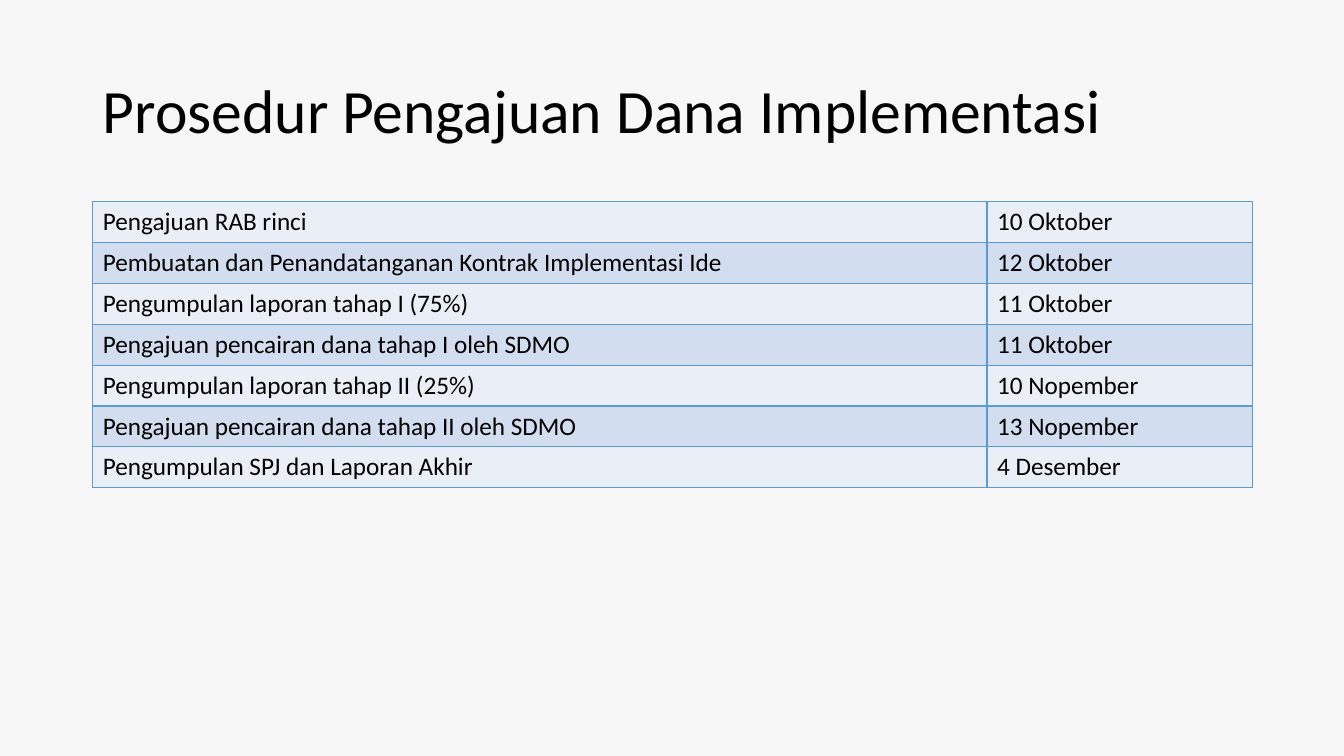
import dataclasses

import lxml.etree
import pptx
import pptx.dml.color
import pptx.enum.text
import pptx.oxml.ns
import pptx.slide
import pptx.table
import pptx.text.text
import pptx.util
from pptx.util import Inches

FONT = "Calibri"
BACKGROUND = pptx.dml.color.RGBColor(0xF7, 0xF7, 0xF7)
BLACK = pptx.dml.color.RGBColor(0x00, 0x00, 0x00)
BORDER = pptx.dml.color.RGBColor(0x5B, 0x9B, 0xD5)
BANDS = (
    pptx.dml.color.RGBColor(0xEA, 0xEF, 0xF7),
    pptx.dml.color.RGBColor(0xD2, 0xDE, 0xEF),
)

LEFT, WIDTH = Inches(0.92), Inches(11.5)
TABLE_TOP, TABLE_HEIGHT = Inches(2), Inches(2.84)
COLUMN_WIDTHS = (Inches(8.87), Inches(2.63))


@dataclasses.dataclass(frozen=True)
class Step:
    activity: str
    date: str


STEPS = (
    Step("Pengajuan RAB rinci", "10 Oktober"),
    Step("Pembuatan dan Penandatanganan Kontrak Implementasi Ide", "12 Oktober"),
    Step("Pengumpulan laporan tahap I (75%)", "11 Oktober"),
    Step("Pengajuan pencairan dana tahap I oleh SDMO", "11 Oktober"),
    Step("Pengumpulan laporan tahap II (25%)", "10 Nopember"),
    Step("Pengajuan pencairan dana tahap II oleh SDMO", "13 Nopember"),
    Step("Pengumpulan SPJ dan Laporan Akhir", "4 Desember"),
)


def write(frame: pptx.text.text.TextFrame, text: str, size: int) -> None:
    frame.text = text
    font = frame.paragraphs[0].runs[0].font
    font.name = FONT
    font.size = pptx.util.Pt(size)
    font.color.rgb = BLACK


def add_borders(cell: pptx.table._Cell) -> None:
    properties = cell._tc.get_or_add_tcPr()
    qn = pptx.oxml.ns.qn
    for side in ("lnL", "lnR", "lnT", "lnB"):
        line = lxml.etree.SubElement(properties, qn(f"a:{side}"), w=str(pptx.util.Pt(1)))
        fill = lxml.etree.SubElement(line, qn("a:solidFill"))
        lxml.etree.SubElement(fill, qn("a:srgbClr"), val=str(BORDER))


def format_title(page: pptx.slide.Slide) -> None:
    title = page.shapes.title
    title.left, title.top = LEFT, Inches(0.4)
    title.width, title.height = WIDTH, Inches(1.45)
    frame = title.text_frame
    write(frame, "Prosedur Pengajuan Dana Implementasi", 44)
    frame.word_wrap = True
    frame.vertical_anchor = pptx.enum.text.MSO_ANCHOR.MIDDLE
    para = frame.paragraphs[0]
    para.alignment = pptx.enum.text.PP_ALIGN.LEFT
    para.line_spacing = 0.9


def add_schedule(page: pptx.slide.Slide) -> None:
    table = page.shapes.add_table(
        len(STEPS), len(COLUMN_WIDTHS), LEFT, TABLE_TOP, WIDTH, TABLE_HEIGHT
    ).table
    table.first_row = False
    for column, width in zip(table.columns, COLUMN_WIDTHS):
        column.width = width
    for index, (row, step) in enumerate(zip(table.rows, STEPS)):
        for cell, text in zip(row.cells, (step.activity, step.date)):
            write(cell.text_frame, text, 18)
            add_borders(cell)
            cell.fill.solid()
            cell.fill.fore_color.rgb = BANDS[index % len(BANDS)]


def main() -> None:
    deck = pptx.Presentation()
    deck.slide_width, deck.slide_height = Inches(13.33), Inches(7.5)

    # Title-only page with a plain background
    page = deck.slides.add_slide(deck.slide_layouts[5])
    page.background.fill.solid()
    page.background.fill.fore_color.rgb = BACKGROUND

    # Heading and schedule
    format_title(page)
    add_schedule(page)
    deck.save("out.pptx")


if __name__ == "__main__":
    main()
